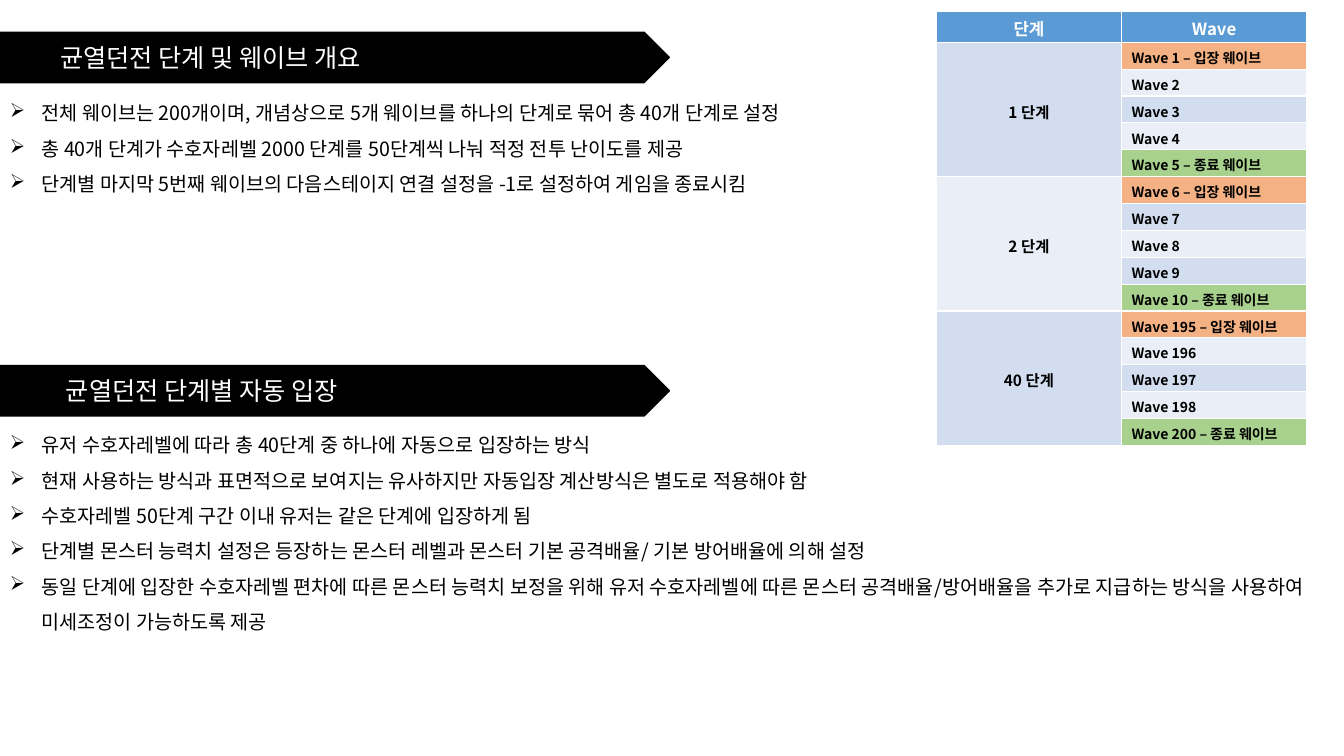
from lxml import etree
from pptx import Presentation, util as u
from pptx.dml.color import RGBColor
from pptx.enum import shapes, text
from pptx.oxml.ns import qn

PX = 3048
FONT = "Noto Sans CJK KR"
COLORS = {
    "black": "000000", "white": "FFFFFF", "header": "5B9BD5",
    "odd": "D2DEEF", "even": "EAEFF7", "entry": "F4B183", "finish": "A9D18E",
}


def px(*lengths):
    return [u.Emu(length * PX) for length in lengths]


def style(para, size, color, bold=False):
    font = para.font
    font.size, font.bold, font.name = u.Pt(size), bold, FONT
    font.color.rgb = RGBColor.from_string(COLORS[color])
    defaults = para._p.pPr.find(qn("a:defRPr"))
    etree.SubElement(defaults, qn("a:ea")).set("typeface", FONT)


deck = Presentation()
deck.slide_width, deck.slide_height = px(4000, 2250)
page = deck.slides.add_slide(deck.slide_layouts[6])

sections = [
    (96, 252, 348, "\t균열던전 단계 및 웨이브 개요", [
        "전체 웨이브는 200개이며, 개념상으로 5개 웨이브를 하나의 단계로 묶어 총 40개 단계로 설정",
        "총 40개 단계가 수호자레벨 2000 단계를 50단계씩 나눠 적정 전투 난이도를 제공",
        "단계별 마지막 5번째 웨이브의 다음스테이지 연결 설정을 -1로 설정하여 게임을 종료시킴",
    ]),
    (1088, 1240, 666, "\t 균열던전 단계별 자동 입장", [
        "유저 수호자레벨에 따라 총 40단계 중 하나에 자동으로 입장하는 방식",
        "현재 사용하는 방식과 표면적으로 보여지는 유사하지만 자동입장 계산방식은 별도로 적용해야 함",
        "수호자레벨 50단계 구간 이내 유저는 같은 단계에 입장하게 됨",
        "단계별 몬스터 능력치 설정은 등장하는 몬스터 레벨과 몬스터 기본 공격배율/ 기본 방어배율에 의해 설정",
        "동일 단계에 입장한 수호자레벨 편차에 따른 몬스터 능력치 보정을 위해 유저 수호자레벨에 따른 "
        "몬스터 공격배율/방어배율을 추가로 지급하는 방식을 사용하여 미세조정이 가능하도록 제공",
    ]),
]

for banner_top, body_top, body_height, title, points in sections:
    banner = page.shapes.add_shape(
        shapes.MSO_SHAPE.PENTAGON, *px(0, banner_top, 1992, 150))
    banner.shadow.inherit = False
    banner.fill.solid()
    banner.fill.fore_color.rgb = RGBColor.from_string(COLORS["black"])
    banner.line.color.rgb = RGBColor.from_string(COLORS["black"])
    banner.line.width = u.Pt(1)
    banner.text_frame.vertical_anchor = text.MSO_ANCHOR.MIDDLE
    para = banner.text_frame.paragraphs[0]
    para.text = title
    para.alignment = text.PP_ALIGN.LEFT
    style(para, 18, "white")

    frame = page.shapes.add_textbox(*px(0, body_top, 4000, body_height)).text_frame
    frame.word_wrap = True
    frame.auto_size = text.MSO_AUTO_SIZE.SHAPE_TO_FIT_TEXT
    for index, point in enumerate(points):
        para = frame.paragraphs[0] if index == 0 else frame.add_paragraph()
        para.text = point
        props = para._p.get_or_add_pPr()
        indent = px(94)[0]
        props.set("marL", str(indent))
        props.set("indent", str(-indent))
        etree.SubElement(props, qn("a:buChar")).set("char", "➢")
        para.line_spacing = 1.5
        style(para, 14, "black")

table = page.shapes.add_table(16, 2, *px(2787, 34, 1102, 1292)).table
for column in table.columns:
    column.width = px(551)[0]
for index, row in enumerate(table.rows):
    row.height = px(80 if index else 92)[0]
    for cell in row.cells:
        cell.margin_top, cell.margin_bottom = px(15, 4)
        cell.fill.solid()
        band = ("odd" if index % 2 else "even") if index else "header"
        cell.fill.fore_color.rgb = RGBColor.from_string(COLORS[band])

for column, heading in enumerate(["단계", "Wave"]):
    para = table.cell(0, column).text_frame.paragraphs[0]
    para.text = heading
    para.alignment = text.PP_ALIGN.CENTER
    style(para, 12, "white", True)

special = {0: ("entry", " – 입장 웨이브"), 4: ("finish", " – 종료 웨이브")}
for group, (stage, first_wave) in enumerate([(1, 1), (2, 6), (40, 195 + 1)]):
    top = 1 + group * 5
    stage_cell = table.cell(top, 0)
    stage_cell.merge(table.cell(top + 4, 0))
    stage_cell.vertical_anchor = text.MSO_ANCHOR.MIDDLE
    para = stage_cell.text_frame.paragraphs[0]
    para.text = f"{stage} 단계"
    para.alignment = text.PP_ALIGN.CENTER
    style(para, 11, "black", True)
    waves = [first_wave + step for step in range(5)]
    if stage == 40:
        waves = [195, 196, 197, 198, 200]
    for step, wave in enumerate(waves):
        cell = table.cell(top + step, 1)
        color, suffix = special.get(step, (None, ""))
        if color:
            cell.fill.fore_color.rgb = RGBColor.from_string(COLORS[color])
        para = cell.text_frame.paragraphs[0]
        para.text = f"Wave {wave}{suffix}"
        style(para, 10, "black", True)

deck.save("out.pptx")
